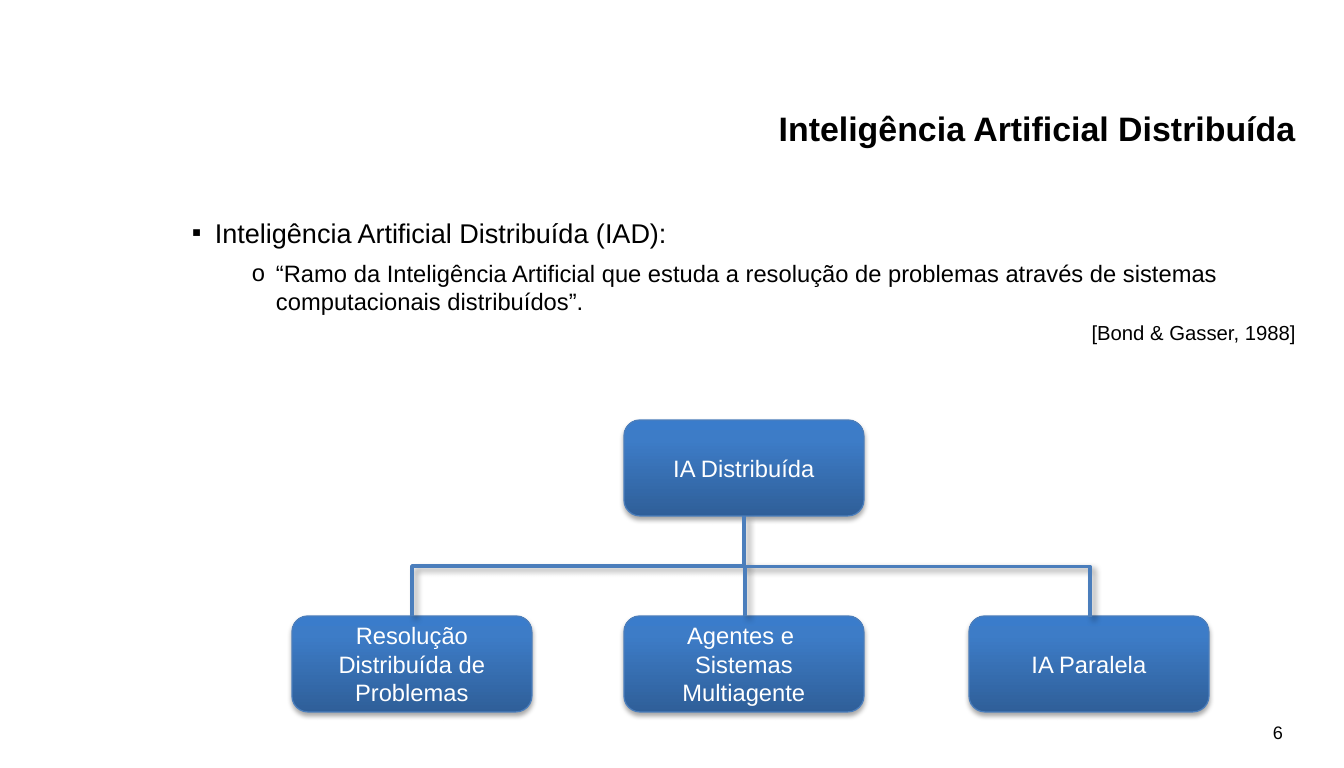
"""Build a slide on distributed artificial intelligence with a small tree."""
from pptx import Presentation
from pptx.dml.color import RGBColor
from pptx.enum.shapes import MSO_CONNECTOR, MSO_SHAPE
from pptx.enum.text import MSO_ANCHOR, PP_ALIGN
from pptx.oxml import parse_xml
from pptx.oxml.ns import qn
from pptx.util import Pt

LEFT, MID, RIGHT = PP_ALIGN.LEFT, PP_ALIGN.CENTER, PP_ALIGN.RIGHT
TOP, CENTRE = MSO_ANCHOR.TOP, MSO_ANCHOR.MIDDLE
ROUND, ELBOW = MSO_SHAPE.ROUNDED_RECTANGLE, MSO_CONNECTOR.ELBOW
NS = 'xmlns:a="http://schemas.openxmlformats.org/drawingml/2006/main"'
SCALE = 7500
SIZE = (1344, 768)

BLACK, WHITE, EDGE = "000000", "FFFFFF", "4B7EBC"
STOPS = [(0, "2F5F99"), (80, "3D7CC7"), (100, "3A7CCB")]
BOX_SHADE = dict(alpha=35, blur=3.1, dist=1.8, turn=90)
LINE_SHADE = dict(alpha=40, blur=4, dist=3, turn=45)

TITLE = [dict(text="Inteligência Artificial Distribuída", size=20, bold=True, align=RIGHT)]
NUMBER = [dict(text="6", size=10.7, align=RIGHT)]
BODY = [
    dict(text="Inteligência Artificial Distribuída (IAD):",
         size=16, after=6, margin=23, indent=-23, bullet="▪"),
    dict(text="“Ramo da Inteligência Artificial que estuda a resolução de "
              "problemas através de sistemas computacionais distribuídos”.",
         size=14, after=3, level=1, margin=84, indent=-24, bullet="o"),
    dict(text="[Bond & Gasser, 1988]",
         size=12, after=3, level=3, margin=240, align=RIGHT),
]
TEXTS = [
    ((192, 108, 1104, 96), TITLE, TOP, (0, 0)),
    ((983, 712, 313, 41), NUMBER, CENTRE, (13, 7)),
    ((192, 216, 1104, 504), BODY, TOP, (0, 0)),
]

BOX_W, BOX_H = 240, 96
ROOT_Y, CHILD_Y = 420, 616
ROOT = ("IA Distribuída", 624)
CHILDREN = [
    ("Resolução Distribuída de Problemas", 292),
    ("Agentes e \vSistemas Multiagente", 624),
    ("IA Paralela", 969),
]


def px(*vals):
    return [round(v * SCALE) for v in vals]


def rgb(code):
    return RGBColor.from_string(code)


def assign(obj, vals):
    for name, val in vals.items():
        setattr(obj, name, val)


def write(frame, paras, color):
    for num, item in enumerate(paras):
        para = frame.add_paragraph() if num else frame.paragraphs[0]
        para.text = item["text"]
        assign(para, dict(alignment=item.get("align", LEFT),
                          level=item.get("level", 0),
                          space_after=Pt(item.get("after", 0))))
        for run in para.runs:
            assign(run.font, dict(name="Arial", size=Pt(item["size"]),
                                  bold=item.get("bold", False)))
            run.font.color.rgb = rgb(color)
        props = para._p.get_or_add_pPr()
        margin, indent = px(item.get("margin", 0), item.get("indent", 0))
        props.set("marL", str(margin))
        props.set("indent", str(indent))
        if "bullet" in item:
            props.append(parse_xml(f'<a:buFont {NS} typeface="Arial"/>'))
            props.append(parse_xml(f'<a:buChar {NS} char="{item["bullet"]}"/>'))


def shade(shape, alpha, blur, dist, turn):
    shape._element.spPr.append(parse_xml(
        f'<a:effectLst {NS}><a:outerShdw blurRad="{Pt(blur)}" dist="{Pt(dist)}" '
        f'dir="{turn * 60000}" algn="ctr" rotWithShape="0"><a:srgbClr val="{BLACK}">'
        f'<a:alpha val="{alpha * 1000}"/></a:srgbClr></a:outerShdw></a:effectLst>'))


def stroke(shape, width):
    shape.line.color.rgb = rgb(EDGE)
    shape.line.width = Pt(width)


def add_text(slide, area, paras, anchor, inset):
    frame = slide.shapes.add_textbox(*px(*area)).text_frame
    side, edge = px(*inset)
    assign(frame, dict(word_wrap=True, vertical_anchor=anchor,
                       margin_left=side, margin_right=side,
                       margin_top=edge, margin_bottom=edge))
    write(frame, paras, BLACK)


def add_box(slide, text, x, y):
    box = slide.shapes.add_shape(ROUND, *px(x, y, BOX_W, BOX_H))
    box.fill.gradient()
    box.fill.gradient_angle = 90
    stops = "".join(f'<a:gs pos="{pos * 1000}"><a:srgbClr val="{code}"/></a:gs>'
                    for pos, code in STOPS)
    grad = box._element.spPr.find(qn("a:gradFill"))
    grad.replace(grad.find(qn("a:gsLst")),
                 parse_xml(f"<a:gsLst {NS}>{stops}</a:gsLst>"))
    stroke(box, 0.75)
    shade(box, **BOX_SHADE)
    assign(box.text_frame, dict(word_wrap=True, vertical_anchor=CENTRE))
    write(box.text_frame, [dict(text=text, size=14, align=MID)], WHITE)


def add_elbow(slide, start, end, turn, flip, bend):
    (x1, y1), (x2, y2) = start, end
    wide, high = abs(y2 - y1), abs(x2 - x1)
    x, y = (x1 + x2 - wide) / 2, (y1 + y2 - high) / 2
    link = slide.shapes.add_connector(ELBOW, *px(x, y, x + wide, y + high))
    props = link._element.spPr
    frame = props.find(qn("a:xfrm"))
    frame.set("rot", str(turn * 60000))
    if flip:
        frame.set("flipV", "1")
    ratio = round(bend / wide * 100000)
    geom = props.find(qn("a:prstGeom"))
    geom.replace(geom.find(qn("a:avLst")), parse_xml(
        f'<a:avLst {NS}><a:gd name="adj1" fmla="val {ratio}"/></a:avLst>'))
    stroke(link, 2)
    shade(link, **LINE_SHADE)


def main():
    deck = Presentation()
    deck.slide_width, deck.slide_height = px(*SIZE)
    slide = deck.slides.add_slide(deck.slide_layouts[6])
    for item in TEXTS:
        add_text(slide, *item)
    add_box(slide, *ROOT, ROOT_Y)
    for text, x in CHILDREN:
        add_box(slide, text, x, CHILD_Y)
    first, mid, last = [x + BOX_W // 2 for _, x in CHILDREN]
    base = ROOT_Y + BOX_H
    half = (CHILD_Y - base) // 2
    add_elbow(slide, (mid, base), (first, CHILD_Y), 90, False, half)
    add_elbow(slide, (last + 1, CHILD_Y + 1), (mid + 1, CHILD_Y), 270, True, half)
    deck.save("out.pptx")


if __name__ == "__main__":
    main()
